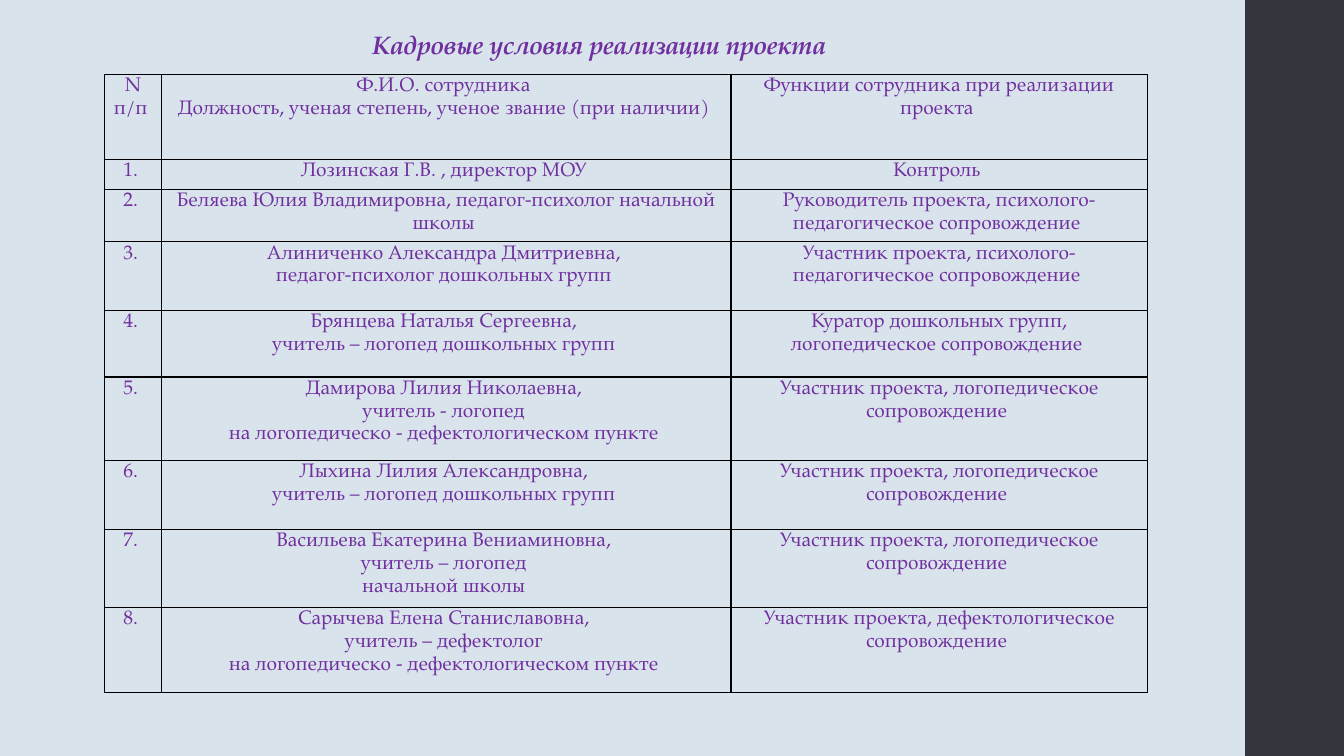
import pptx
import pptx.dml.color
import pptx.enum.shapes
import pptx.enum.text
import pptx.oxml.ns
import pptx.util
from lxml import etree

Inches = pptx.util.Inches
Pt = pptx.util.Pt

FONT = "TeX Gyre Pagella"
PURPLE = "7030A0"
BACKGROUND = "D9E3EB"
BAR = "35353E"
BORDER = "000000"

COLUMN_WIDTHS = [0.56, 5.65, 4.13]
HEADER = (
    "N п/п",
    ["Ф.И.О. сотрудника", "Должность, ученая степень, ученое звание (при наличии)"],
    "Функции сотрудника при реализации проекта",
)
SPEECH_THERAPY = "Участник проекта, логопедическое сопровождение"
CENTRE = "на логопедическо - дефектологическом пункте"
PRESCHOOL_THERAPIST = "учитель – логопед дошкольных групп"
STAFF = [
    (["Лозинская Г.В. , директор МОУ"], "Контроль"),
    (["Беляева Юлия Владимировна, педагог-психолог начальной школы"],
     "Руководитель проекта, психолого-педагогическое сопровождение"),
    (["Алиниченко Александра Дмитриевна,", "педагог-психолог дошкольных групп"],
     "Участник проекта, психолого-педагогическое сопровождение"),
    (["Брянцева Наталья Сергеевна,", PRESCHOOL_THERAPIST],
     "Куратор дошкольных групп, логопедическое сопровождение"),
    (["Дамирова Лилия Николаевна,", "учитель - логопед", CENTRE], SPEECH_THERAPY),
    (["Лыхина Лилия Александровна,", PRESCHOOL_THERAPIST], SPEECH_THERAPY),
    (["Васильева Екатерина Вениаминовна,", "учитель – логопед", "начальной школы"],
     SPEECH_THERAPY),
    (["Сарычева Елена Станиславовна,", "учитель – дефектолог", CENTRE],
     "Участник проекта, дефектологическое сопровождение"),
]
ROW_HEIGHTS = [0.84, 0.3, 0.52, 0.68, 0.66, 0.83, 0.68, 0.78, 0.84]


def color(value):
    """Return the colour for a hex string."""
    return pptx.dml.color.RGBColor.from_string(value)


def format_runs(paragraph, size, emphasis=False):
    """Apply the slide's font and colour to every run of a paragraph."""
    for run in paragraph.runs:
        run.font.name = FONT
        run.font.size = Pt(size)
        run.font.color.rgb = color(PURPLE)
        run.font.bold = run.font.italic = emphasis


def add_side_bar(slide, left, top, width, height):
    """Draw the dark bar along the right edge."""
    bar = slide.shapes.add_shape(
        pptx.enum.shapes.MSO_SHAPE.RECTANGLE,
        Inches(left), Inches(top), Inches(width), Inches(height))
    bar.shadow.inherit = False
    bar.fill.solid()
    bar.fill.fore_color.rgb = color(BAR)
    bar.line.fill.background()


def place_title(slide, left, top, width, height):
    """Fill and place the title placeholder."""
    title = slide.shapes.title
    title.left, title.top = Inches(left), Inches(top)
    title.width, title.height = Inches(width), Inches(height)
    frame = title.text_frame
    frame.text = "Кадровые условия реализации проекта"
    frame.word_wrap = False
    frame.auto_size = pptx.enum.text.MSO_AUTO_SIZE.NONE
    frame.vertical_anchor = pptx.enum.text.MSO_ANCHOR.TOP
    paragraph = frame.paragraphs[0]
    paragraph.alignment = pptx.enum.text.PP_ALIGN.LEFT
    format_runs(paragraph, 18, emphasis=True)


def add_borders(cell):
    """Give a cell a one-point line on all four sides."""
    qn = pptx.oxml.ns.qn
    properties = cell._tc.get_or_add_tcPr()
    for side in ("a:lnL", "a:lnR", "a:lnT", "a:lnB"):
        line = etree.SubElement(properties, qn(side), w=str(Pt(1)))
        fill = etree.SubElement(line, qn("a:solidFill"))
        etree.SubElement(fill, qn("a:srgbClr"), val=BORDER)


def fill_cell(cell, content):
    """Write one centred paragraph per line into a bordered clear cell."""
    lines = [content] if isinstance(content, str) else content
    cell.margin_left = cell.margin_right = Inches(0.06)
    cell.margin_top = cell.margin_bottom = 0
    cell.text_frame.text = "\n".join(f"{line} " for line in lines)
    for paragraph in cell.text_frame.paragraphs:
        paragraph.alignment = pptx.enum.text.PP_ALIGN.CENTER
        paragraph.line_spacing = 1.15
        format_runs(paragraph, 14)
    add_borders(cell)
    cell.fill.background()


def add_staff_table(slide, left, top, width, height):
    """Build the numbered table of staff and their functions."""
    rows = [HEADER] + [
        (f"{number}.", person, duty)
        for number, (person, duty) in enumerate(STAFF, 1)]
    table = slide.shapes.add_table(
        len(rows), len(COLUMN_WIDTHS),
        Inches(left), Inches(top), Inches(width), Inches(height)).table
    table.first_row = table.horz_banding = False
    for column, column_width in zip(table.columns, COLUMN_WIDTHS):
        column.width = Inches(column_width)
    for row, row_height, contents in zip(table.rows, ROW_HEIGHTS, rows):
        row.height = Inches(row_height)
        for cell, content in zip(row.cells, contents):
            fill_cell(cell, content)


def main():
    """Build and save the presentation."""
    presentation = pptx.Presentation()
    presentation.slide_width = Inches(13.33)
    presentation.slide_height = Inches(7.5)
    slide = presentation.slides.add_slide(presentation.slide_layouts[5])
    slide.background.fill.solid()
    slide.background.fill.fore_color.rgb = color(BACKGROUND)
    add_side_bar(slide, 12.35, 0, 0.98, 7.5)
    add_staff_table(slide, 1.04, 0.74, sum(COLUMN_WIDTHS), sum(ROW_HEIGHTS))
    place_title(slide, 3.59, 0.24, 4.92, 0.4)
    presentation.save("out.pptx")


if __name__ == "__main__":
    main()
